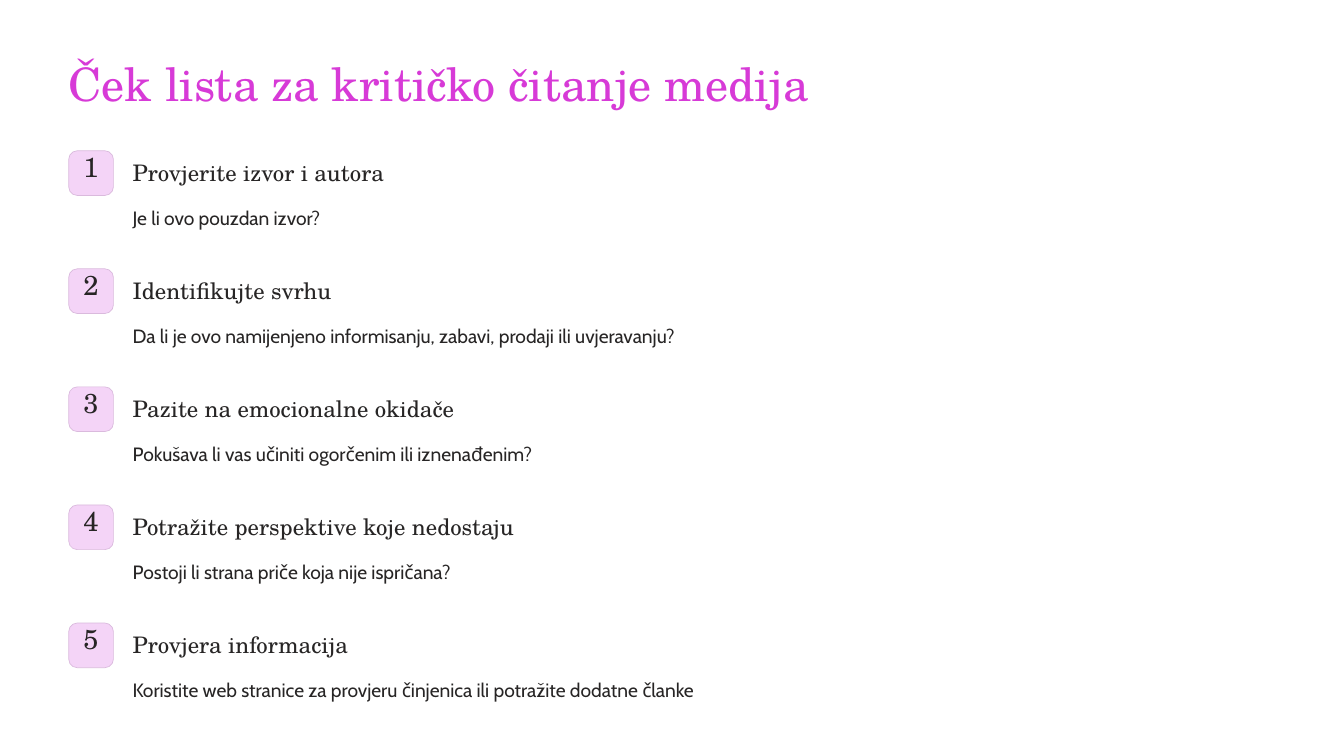
import pptx
import pptx.dml.color
import pptx.enum.shapes
import pptx.enum.text
import pptx.util

Cm = pptx.util.Cm
Pt = pptx.util.Pt
RGBColor = pptx.dml.color.RGBColor
ALIGN = pptx.enum.text.PP_ALIGN

WHITE = RGBColor(0xFF, 0xFF, 0xFF)
PINK = RGBColor(0xD7, 0x3A, 0xD7)
PALE = RGBColor(0xF4, 0xD4, 0xF7)
EDGE = RGBColor(0xDA, 0xBA, 0xDD)
INK = RGBColor(0x27, 0x25, 0x25)

SERIF = "TeX Gyre Schola"
SANS = "Cabin"

LEFT = 2.08
FIRST = 4.56
PITCH = 3.57
BADGE = 1.35

STEPS = [
    ("Provjerite izvor i autora", "Je li ovo pouzdan izvor?"),
    ("Identifikujte svrhu",
     "Da li je ovo namijenjeno informisanju, zabavi, prodaji ili uvjeravanju?"),
    ("Pazite na emocionalne okidače",
     "Pokušava li vas učiniti ogorčenim ili iznenađenim?"),
    ("Potražite perspektive koje nedostaju",
     "Postoji li strana priče koja nije ispričana?"),
    ("Provjera informacija",
     "Koristite web stranice za provjeru činjenica ili potražite dodatne članke"),
]


def add_text(slide, text, box, *, size, line, font=SERIF, color=INK, align=ALIGN.LEFT):
    """Add one line of text; box is left, top, width, height in cm."""
    frame = slide.shapes.add_textbox(*map(Cm, box)).text_frame
    frame.word_wrap = False
    frame.margin_left = frame.margin_right = 0
    frame.margin_top = frame.margin_bottom = 0
    para = frame.paragraphs[0]
    para.alignment = align
    para.line_spacing = Pt(line)
    run = para.add_run()
    run.text = text
    run.font.name = font
    run.font.size = Pt(size)
    run.font.color.rgb = color


def add_badge(slide, left, top, number):
    badge = slide.shapes.add_shape(
        pptx.enum.shapes.MSO_SHAPE.ROUNDED_RECTANGLE,
        Cm(left), Cm(top), Cm(BADGE), Cm(BADGE))
    badge.adjustments[0] = 0.19
    badge.shadow.inherit = False
    badge.fill.solid()
    badge.fill.fore_color.rgb = PALE
    badge.line.color.rgb = EDGE
    badge.line.width = Pt(0.6)
    add_text(slide, str(number), (left + 0.25, top + 0.14, 0.84, 1.04),
             size=23.5, line=23.5, align=ALIGN.CENTER)


def add_step(slide, left, top, number, heading, question):
    add_badge(slide, left, top, number)
    inset = left + 1.93
    add_text(slide, heading, (inset, top + 0.2, 12, 0.86), size=19.5, line=24.5)
    add_text(slide, question, (inset, top + 1.44, 34.54, 0.94),
             size=16.5, line=26.5, font=SANS)


def main():
    deck = pptx.Presentation()
    deck.slide_width, deck.slide_height = Cm(40.64), Cm(22.86)
    slide = deck.slides.add_slide(deck.slide_layouts[6])
    slide.background.fill.solid()
    slide.background.fill.fore_color.rgb = WHITE
    add_text(slide, "Ček lista za kritičko čitanje medija", (LEFT, 1.63, 24.26, 1.75),
             size=39.5, line=49, color=PINK)
    for index, step in enumerate(STEPS):
        add_step(slide, LEFT, FIRST + index * PITCH, index + 1, *step)
    deck.save("out.pptx")


if __name__ == "__main__":
    main()
